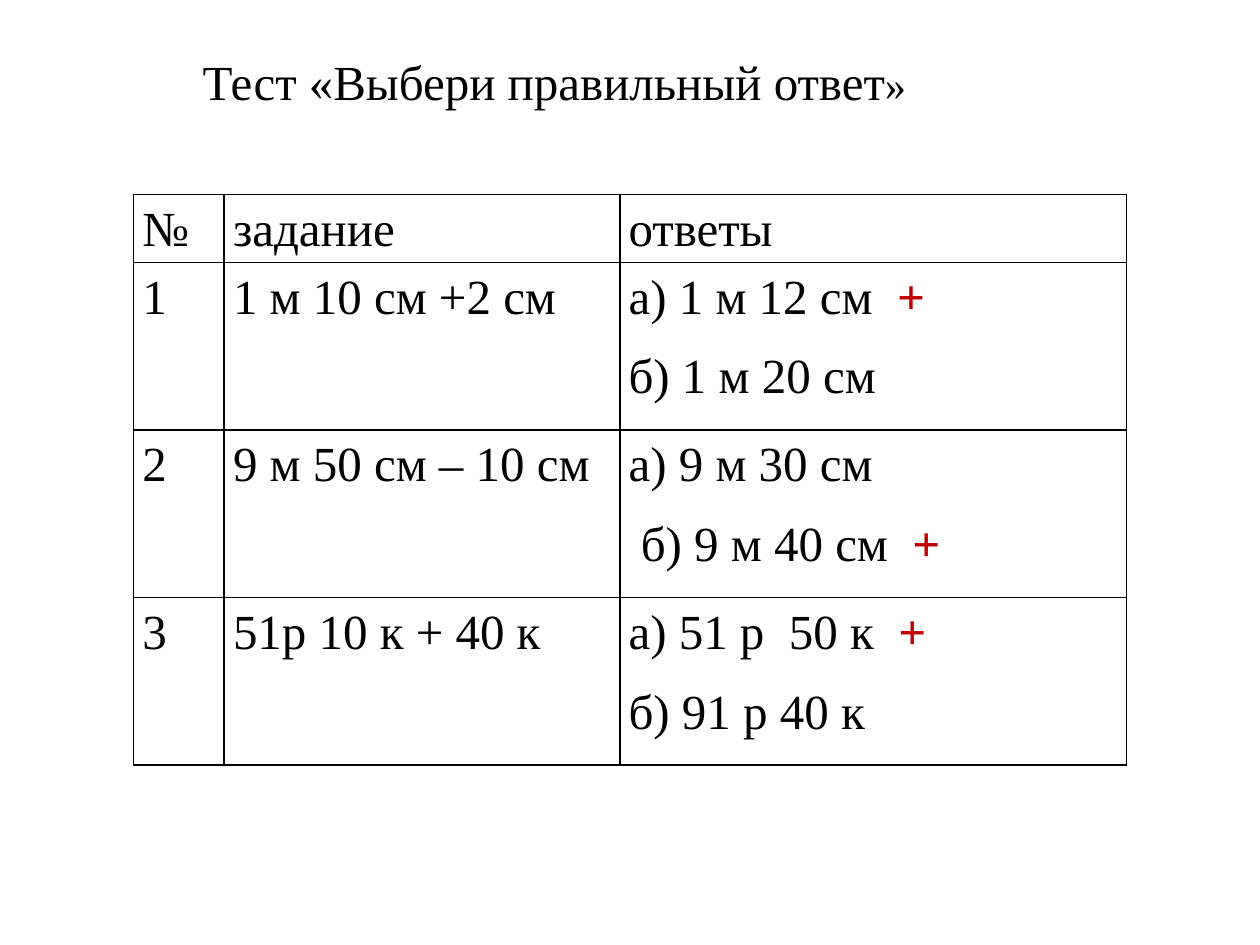
from dataclasses import dataclass

from lxml.etree import SubElement
from pptx import Presentation
from pptx.dml.color import RGBColor as Color
from pptx.enum.text import MSO_ANCHOR as Anchor, PP_ALIGN as Align
from pptx.oxml.ns import qn
from pptx.util import Inches, Pt


@dataclass(frozen=True)
class Theme:
    font: str = "Times New Roman"
    ink: str = "000000"
    paper: str = "FFFFFF"
    correct: str = "C00000"
    body: float = 28
    quote: float = 24.3
    line_spacing: float = 1.15
    space_after: float = 10
    border: float = 1


THEME = Theme()
WIDTH, HEIGHT = Inches(10), Inches(7.5)
COLUMN_WIDTHS = (0.72, 3.14, 4.02)
ROW_HEIGHTS = (0.5, 1.33, 1.33, 1.33)
MARK = "+"

# Each cell is a list of paragraphs; a closing plus marks the right answer
ROWS = [
    (["№"], ["задание"], ["ответы"]),
    (["1"], ["1 м 10 см +2 см"], ["а) 1 м 12 см  +", "б) 1 м 20 см"]),
    (["2"], ["9 м 50 см – 10 см"], ["а) 9 м 30 см", " б) 9 м 40 см  +"]),
    (["3"], ["51р 10 к + 40 к"], ["а) 51 р  50 к  +", "б) 91 р 40 к"]),
]


def share_x(part):
    return int(WIDTH * part)


def share_y(part):
    return int(HEIGHT * part)


def add_span(para, text, size=THEME.body, color=THEME.ink, bold=False):
    span = para.add_run()
    span.text = text
    span.font.name = THEME.font
    span.font.size = Pt(size)
    span.font.bold = bold
    span.font.color.rgb = Color.from_string(color)


def space_para(para):
    para.line_spacing = THEME.line_spacing
    para.space_after = Pt(THEME.space_after)


def add_title(page):
    box = page.shapes.add_textbox(share_x(0.05), share_y(-0.04), share_x(0.78), share_y(0.19))
    frame = box.text_frame
    frame.word_wrap = True
    frame.vertical_anchor = Anchor.BOTTOM
    frame.margin_bottom = Inches(0.25)
    para = frame.paragraphs[0]
    para.alignment = Align.CENTER
    space_para(para)
    add_span(para, "Тест «Выбери правильный ответ")
    add_span(para, "»", THEME.quote)


def add_borders(cell):
    properties = cell._tc.get_or_add_tcPr()
    for position, side in enumerate(("lnL", "lnR", "lnT", "lnB")):
        line = SubElement(properties, qn(f"a:{side}"), w=str(Pt(THEME.border)))
        fill = SubElement(line, qn("a:solidFill"))
        SubElement(fill, qn("a:srgbClr"), val=THEME.ink)
        properties.remove(line)
        properties.insert(position, line)  # borders come before the fill


def fill_cell(cell, lines):
    cell.fill.solid()
    cell.fill.fore_color.rgb = Color.from_string(THEME.paper)
    cell.margin_left = cell.margin_right = Inches(0.07)
    cell.margin_top = cell.margin_bottom = 0
    add_borders(cell)
    for index, text in enumerate(lines):
        frame = cell.text_frame
        para = frame.add_paragraph() if index else frame.paragraphs[0]
        space_para(para)
        add_span(para, text.removesuffix(MARK))
        if text.endswith(MARK):
            add_span(para, MARK, color=THEME.correct, bold=True)


def add_test_table(page):
    table = page.shapes.add_table(
        len(ROWS), len(COLUMN_WIDTHS), share_x(0.106), share_y(0.206),
        Inches(sum(COLUMN_WIDTHS)), Inches(sum(ROW_HEIGHTS)),
    ).table
    for column, width in zip(table.columns, COLUMN_WIDTHS):
        column.width = Inches(width)
    for row, height, contents in zip(table.rows, ROW_HEIGHTS, ROWS):
        row.height = Inches(height)
        for cell, lines in zip(row.cells, contents):
            fill_cell(cell, lines)


def main():
    deck = Presentation()
    deck.slide_width, deck.slide_height = WIDTH, HEIGHT
    page = deck.slides.add_slide(deck.slide_layouts[6])
    # Heading
    add_title(page)
    # Questions and answers
    add_test_table(page)
    deck.save("out.pptx")


if __name__ == "__main__":
    main()
